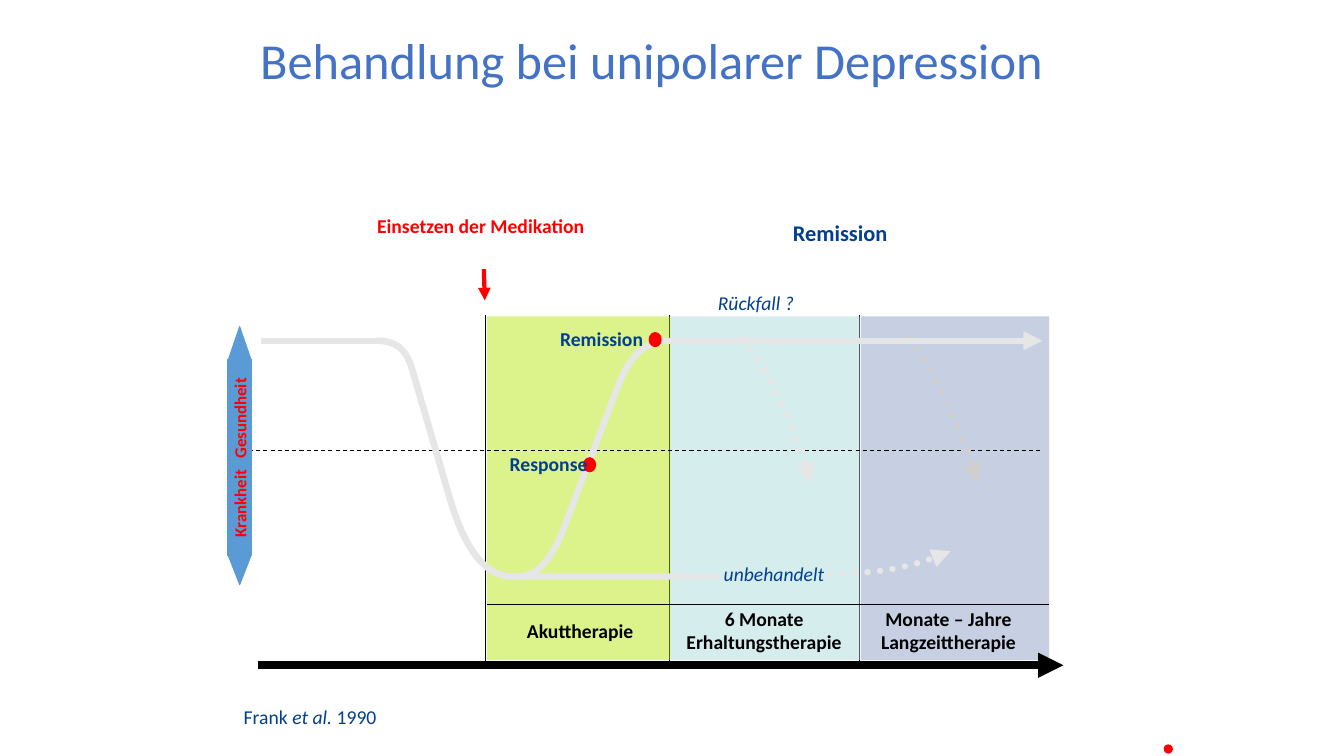
from dataclasses import dataclass
from itertools import pairwise
from math import dist
from typing import NamedTuple

from lxml import etree
from pptx import Presentation
from pptx.dml.color import RGBColor
from pptx.enum.dml import MSO_LINE
from pptx.enum.shapes import MSO_CONNECTOR, MSO_SHAPE
from pptx.enum.text import MSO_ANCHOR, MSO_AUTO_SIZE, PP_ALIGN
from pptx.oxml.ns import qn
from pptx.util import Pt

RECTANGLE, TRIANGLE, OVAL = MSO_SHAPE.RECTANGLE, MSO_SHAPE.ISOSCELES_TRIANGLE, MSO_SHAPE.OVAL
STRAIGHT = MSO_CONNECTOR.STRAIGHT
DASHED, DOTTED = MSO_LINE.DASH, MSO_LINE.ROUND_DOT
MIDDLE, CENTER = MSO_ANCHOR.MIDDLE, PP_ALIGN.CENTER
NO_AUTOFIT = MSO_AUTO_SIZE.NONE

FONT = "Calibri"
COLOURS = {
    "title": "4472C4", "navy": "023F8E", "red": "FF0000", "black": "000000",
    "axis": "5B9BD5", "course": "E7E6E6", "late": "CFCFCF",
    "acute": "B3E500", "maintenance": "A6D9DA", "longterm": "8395C1",
}

# Levels of the chart, from top to bottom, and its main upright lines
PANEL_TOP, HEALTHY, THRESHOLD, ILL = 226, 243.4, 321.8, 411.8
PHASE_RULE, PANEL_BOTTOM, TIME_AXIS = 432, 471.5, 475.2
HEALTH_AXIS, COURSE_START, ONSET = 171.2, 268.6, 346.3


class Point(NamedTuple):
    x: float
    y: float

    def toward(self, other: "Point", share: float) -> "Point":
        return Point(self.x + (other.x - self.x) * share, self.y + (other.y - self.y) * share)


class Corner(NamedTuple):
    """A bend in a course: how far before and after the point it is rounded."""
    point: Point
    before: float
    after: float


class Box(NamedTuple):
    """A frame given by its centre."""
    x: float
    y: float
    width: float
    height: float

    def lengths(self) -> tuple[Pt, Pt, Pt, Pt]:
        left, top = self.x - self.width / 2, self.y - self.height / 2
        return Pt(left), Pt(top), Pt(self.width), Pt(self.height)


@dataclass
class Span:
    text: str
    size: float = 14
    colour: str = "navy"
    bold: bool = False
    italic: bool = False
    spacing: float = 0


@dataclass
class Stroke:
    colour: str = "black"
    width: float = 0.75
    dash: MSO_LINE | None = None
    arrow: bool = False


@dataclass
class Phase:
    left: float
    width: float
    colour: str
    name: str
    name_x: float


@dataclass
class Milestone:
    name: str
    centre: Point
    name_x: float


@dataclass
class Caption:
    box: Box
    spans: list[Span]


THIN, COURSE = Stroke(), Stroke("course", 4.5)
COURSE_ARROW = Stroke("course", 4.5, arrow=True)
COURSE_DOTS, LATE_DOTS = (Stroke(colour, 4.5, DOTTED, True) for colour in ("course", "late"))

PHASES = [
    Phase(614.9, 134.6, "longterm", "Monate – Jahre Langzeittherapie", 677.5),
    Phase(478.8, 135.6, "maintenance", "6 Monate Erhaltungstherapie", 545.8),
    Phase(347.8, 131, "acute", "Akuttherapie", 414.4),
]
FALL = [Corner(Point(288.4, HEALTHY), 18, 20), Corner(Point(337.6, ILL), 59, 28)]
RISE = [Corner(Point(389.5, ILL), 19, 37), Corner(Point(453.8, HEALTHY), 33, 24)]
RELAPSES = [(530.6, COURSE_DOTS), (649.4, LATE_DOTS)]
REMISSION_STOPS = [473.8, 532, 650, 744.5]
MILESTONES = [
    Milestone("Response", Point(421.2, 332), 391.9),
    Milestone("Remission", Point(468, 242.6), 429.8),
]
CAPTIONS = [
    Caption(Box(552.9, 410, 95, 24), [Span("unbehandelt", italic=True)]),
    Caption(Box(540, 216, 77, 24), [Span("Rückfall ?", italic=True)]),
    Caption(Box(602, 166, 105, 26), [Span("Remission ", 16, bold=True)]),
    Caption(Box(345, 161, 172, 24), [Span("Einsetzen der Medikation ", colour="red", bold=True)]),
    Caption(Box(221.5, 512, 120, 24), [Span("Frank "), Span("et al.", italic=True), Span(" 1990")]),
]


def rgb(name: str) -> RGBColor:
    return RGBColor.from_string(COLOURS[name])


def add_spans(frame, spans: list[Span]) -> None:
    frame.vertical_anchor = MIDDLE
    para = frame.paragraphs[0]
    para.alignment = CENTER
    for span in spans:
        run = para.add_run()
        run.text = span.text
        run.font.name, run.font.size = FONT, Pt(span.size)
        run.font.bold, run.font.italic = span.bold, span.italic
        run.font.color.rgb = rgb(span.colour)
        if span.spacing:
            run._r.get_or_add_rPr().set("spc", str(round(span.spacing * 100)))


def add_caption(page, caption: Caption) -> None:
    frame = page.shapes.add_textbox(*caption.box.lengths()).text_frame
    frame.word_wrap = True
    add_spans(frame, caption.spans)


def apply_stroke(shape, stroke: Stroke) -> None:
    shape.line.color.rgb = rgb(stroke.colour)
    shape.line.width = Pt(stroke.width)
    if stroke.dash is not None:
        shape.line.dash_style = stroke.dash
    if stroke.dash == DOTTED:
        shape.get_or_add_ln().set("cap", "rnd")
    if stroke.arrow:
        etree.SubElement(shape.get_or_add_ln(), qn("a:tailEnd"), type="triangle")


def add_line(page, start: Point, end: Point, stroke: Stroke) -> None:
    line = page.shapes.add_connector(STRAIGHT, *(Pt(value) for value in (*start, *end)))
    apply_stroke(line, stroke)
    etree.SubElement(line._element.spPr, qn("a:effectLst"))


def add_level(page, left: float, right: float, y: float, stroke: Stroke) -> None:
    add_line(page, Point(left, y), Point(right, y), stroke)


def bend(start: Point, corner: Point, end: Point) -> list[Point]:
    """Three Bézier points that lead from start to end, pulled toward corner."""
    return [start.toward(corner, 2 / 3), end.toward(corner, 2 / 3), end]


def rounded(start: Point, corners: list[Corner], end: Point) -> list[Point]:
    """Bézier points of a course with straight runs and rounded corners."""
    course = [start]
    stops = [start, *(corner.point for corner in corners), end]
    for corner, previous, following in zip(corners, stops, stops[2:]):
        entry = corner.point.toward(previous, corner.before / dist(corner.point, previous))
        leave = corner.point.toward(following, corner.after / dist(corner.point, following))
        course += bend(course[-1], course[-1].toward(entry, 0.5), entry)
        course += bend(entry, corner.point, leave)
    return course + bend(course[-1], course[-1].toward(end, 0.5), end)


def add_curve(page, course: list[Point], stroke: Stroke) -> None:
    """Draw a freeform through the points, then join each three into one Bézier section."""
    first, *others = [(Pt(x), Pt(y)) for x, y in course]
    builder = page.shapes.build_freeform(*first)
    builder.add_line_segments(others, close=False)
    shape = builder.convert_to_shape()
    shape.shadow.inherit = False
    shape.fill.background()
    apply_stroke(shape, stroke)
    outline = next(shape._element.iter(qn("a:path")))
    steps = outline.findall(qn("a:lnTo"))
    for index in range(0, len(steps), 3):
        section = etree.SubElement(outline, qn("a:cubicBezTo"))
        for step in steps[index:index + 3]:
            section.append(step[0])
            outline.remove(step)


def add_solid(page, kind: MSO_SHAPE, box: Box, colour: str, rotation: float = 0):
    shape = page.shapes.add_shape(kind, *box.lengths())
    shape.shadow.inherit = False
    shape.rotation = rotation
    shape.fill.solid()
    shape.fill.fore_color.rgb = rgb(colour)
    apply_stroke(shape, Stroke(colour))
    return shape


def add_title(page) -> None:
    title = page.shapes.title
    title.left, title.top, title.width, title.height = Box(465.5, 45, 692, 90).lengths()
    title.text_frame.auto_size = NO_AUTOFIT
    title.text_frame.paragraphs[0].line_spacing = 0.9
    add_spans(title.text_frame, [Span("Behandlung bei unipolarer Depression", 36, "title")])


def add_phase(page, phase: Phase) -> None:
    box = Box(phase.left + phase.width / 2, (PANEL_TOP + PANEL_BOTTOM) / 2,
              phase.width, PANEL_BOTTOM - PANEL_TOP)
    panel = add_solid(page, RECTANGLE, box, phase.colour)
    panel.line.fill.background()
    tint = next(panel._element.spPr.iter(qn("a:srgbClr")))
    etree.SubElement(tint, qn("a:alpha"), val="45000")
    name = Span(phase.name, colour="black", bold=True)
    add_caption(page, Caption(Box(phase.name_x, 450.3, 142.6, 41), [name]))
    edge = phase.left - 0.8
    add_line(page, Point(edge, PANEL_TOP - 1), Point(edge, TIME_AXIS), THIN)


def add_courses(page) -> None:
    start = Point(COURSE_START, HEALTHY)
    add_level(page, 186.5, COURSE_START, HEALTHY, COURSE)
    add_curve(page, rounded(start, FALL + RISE, Point(478, HEALTHY)), COURSE)
    for left, stroke in RELAPSES:
        top = Point(left, HEALTHY - 1.5)
        pull, end = Point(left + 27.3, top.y + 35), Point(left + 49, top.y + 103)
        add_curve(page, [top, *bend(top, pull, end)], stroke)
    add_curve(page, rounded(start, FALL, Point(514.1, ILL)), COURSE)
    late = Point(592.6, ILL - 2)
    add_curve(page, [late, *bend(late, Point(643, late.y), Point(679, 393.8))], COURSE_DOTS)
    for left, right in pairwise(REMISSION_STOPS):
        last = right == REMISSION_STOPS[-1]
        add_level(page, left, right, HEALTHY, COURSE_ARROW if last else COURSE)


def add_health_axis(page) -> None:
    bar = add_solid(page, RECTANGLE, Box(HEALTH_AXIS, 326.8, 139.7, 17.3), "axis", 270)
    bar.text_frame.word_wrap = False
    words = [("Krankheit", 0), (" ", 5.4), ("Gesundheit", 0)]
    add_spans(bar.text_frame, [Span(word, 12, "red", True, spacing=gap) for word, gap in words])
    for y, height, rotation in ((244.8, 23, 0), (407.5, 20.2, 180)):
        add_solid(page, TRIANGLE, Box(HEALTH_AXIS, y, 15.8, height), "axis", rotation)


def add_milestone(page, milestone: Milestone) -> None:
    x, y = milestone.centre
    add_solid(page, OVAL, Box(x, y, 8.6, 10.1), "red")
    add_caption(page, Caption(Box(milestone.name_x, y - 0.6, 100.8, 24),
                              [Span(milestone.name, bold=True)]))


def main() -> None:
    deck = Presentation()
    deck.slide_width, deck.slide_height = Pt(960), Pt(540)
    page = deck.slides.add_slide(deck.slide_layouts[5])
    add_title(page)
    for phase in PHASES:
        add_phase(page, phase)
    add_level(page, PHASES[-1].left, 749.5, PHASE_RULE, THIN)
    add_level(page, 177.8, 743.8, THRESHOLD, Stroke(dash=DASHED))
    add_courses(page)
    add_health_axis(page)
    add_level(page, 184.3, 759.6, TIME_AXIS, Stroke("black", 6, arrow=True))
    add_line(page, Point(ONSET - 0.7, 192.2), Point(ONSET, 214.6), Stroke("red", 3, arrow=True))
    for milestone in MILESTONES:
        add_milestone(page, milestone)
    for caption in CAPTIONS:
        add_caption(page, caption)
    add_solid(page, OVAL, Box(834.5, 535, 5.8, 5.8), "red")
    deck.save("out.pptx")


if __name__ == "__main__":
    main()
